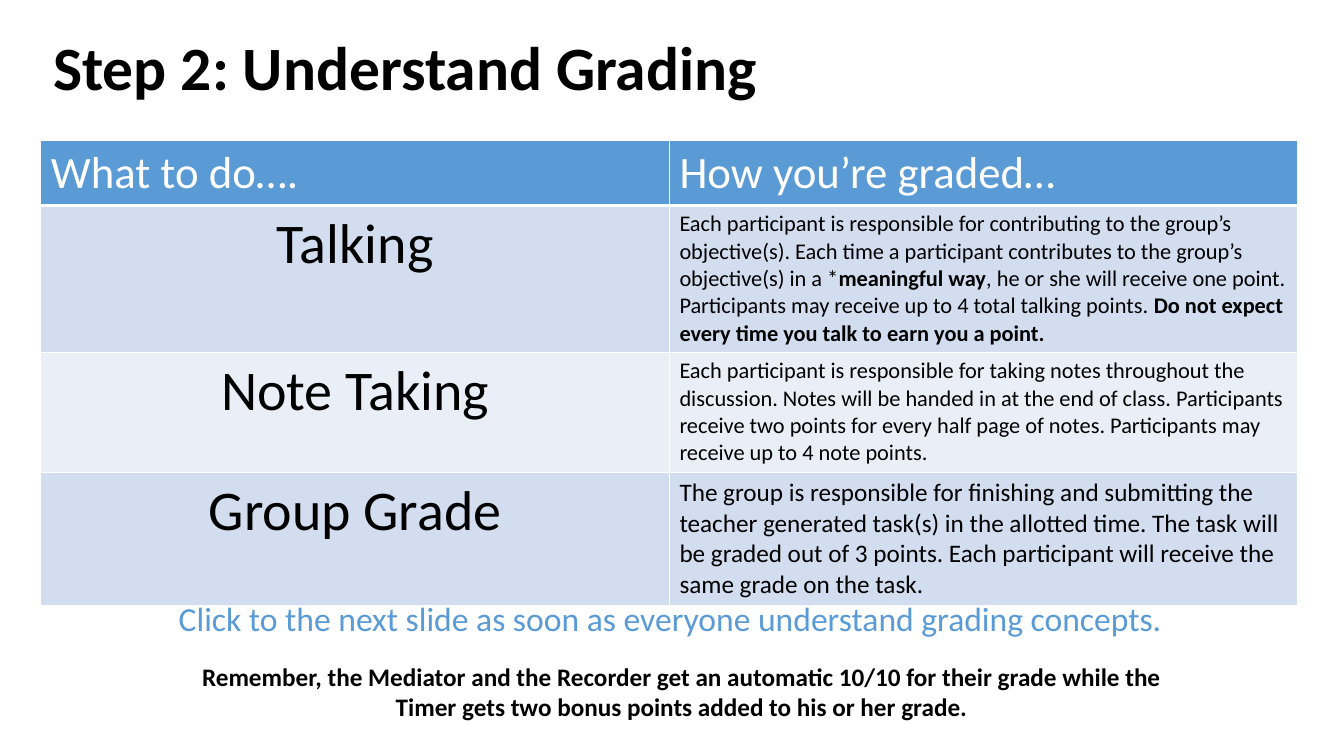
import dataclasses

import pptx
import pptx.dml.color
import pptx.enum.text
import pptx.util
from lxml import etree
from pptx.oxml.ns import qn

Cm, Pt = pptx.util.Cm, pptx.util.Pt
RGB = pptx.dml.color.RGBColor.from_string
Align = pptx.enum.text.PP_ALIGN
Anchor = pptx.enum.text.MSO_ANCHOR


@dataclasses.dataclass
class Theme:
    font: str = "Calibri"
    black: str = "000000"
    white: str = "FFFFFF"
    blue: str = "5B9BD5"
    dark: str = "D2DEEF"
    light: str = "EAEFF7"
    title: int = 44
    task: int = 40
    head: int = 32
    hint: int = 24
    note: int = 18
    rule: int = 16


theme = Theme()


def write(frame, parts, size, color, align=Align.LEFT):
    """Fill a text frame with one paragraph of (text, bold) parts."""
    frame.word_wrap = True
    para = frame.paragraphs[0]
    para.alignment = align
    for text, bold in parts:
        run = para.add_run()
        run.text = text
        run.font.name = theme.font
        run.font.size = Pt(size)
        run.font.bold = bold
        run.font.color.rgb = RGB(color)


def border(cell, base):
    """Draw white cell borders, with the given bottom width in points."""
    props = cell._tc.get_or_add_tcPr()
    for side, width in (("L", 1), ("R", 1), ("T", 1), ("B", base)):
        line = etree.SubElement(props, qn(f"a:ln{side}"), w=str(Pt(width)))
        fill = etree.SubElement(line, qn("a:solidFill"))
        etree.SubElement(fill, qn("a:srgbClr"), val=theme.white)


deck = pptx.Presentation()
deck.slide_width, deck.slide_height = Cm(33.87), Cm(19.05)
slide = deck.slides.add_slide(deck.slide_layouts[5])

# Title
title = slide.shapes.title
title.left, title.top, title.width, title.height = Cm(1.09), Cm(0), Cm(31.67), Cm(3.53)
title.text_frame.vertical_anchor = Anchor.MIDDLE
write(title.text_frame, [("Step 2: Understand Grading", True)], theme.title, theme.black)
title.text_frame.paragraphs[0].line_spacing = 0.9

# Grading table: height, fill, task, task size, grading parts, grading size
rows = [
    (1.63, theme.blue, "What to do….", theme.head,
     [("How you’re graded…", False)], theme.head),
    (3.7, theme.dark, "Talking", theme.task,
     [("Each participant is responsible for contributing to the group’s objective(s). "
       "Each time a participant contributes to the group’s objective(s) in a *", False),
      ("meaningful way", True),
      (", he or she will receive one point. Participants may receive up to 4 total "
       "talking points. ", False),
      ("Do not expect every time you talk to earn you a point.", True)], theme.rule),
    (3.02, theme.light, "Note Taking", theme.task,
     [("Each participant is responsible for taking notes throughout the discussion. "
       "Notes will be handed in at the end of class. Participants receive two points "
       "for every half page of notes. Participants may receive up to 4 note points.",
       False)], theme.rule),
    (3.35, theme.dark, "Group Grade", theme.task,
     [("The group is responsible for finishing and submitting the teacher generated "
       "task(s) in the allotted time. The task will be graded out of 3 points. Each "
       "participant will receive the same grade on the task.", False)], theme.note),
]
high = Cm(sum(row[0] for row in rows))
table = slide.shapes.add_table(len(rows), 2, Cm(1.03), Cm(3.54), Cm(31.68), high).table

for r, (tall, fill, task, big, parts, small) in enumerate(rows):
    table.rows[r].height = Cm(tall)
    head = r == 0
    color = theme.white if head else theme.black
    align = Align.LEFT if head else Align.CENTER
    write(table.cell(r, 0).text_frame, [(task, False)], big, color, align)
    write(table.cell(r, 1).text_frame, parts, small, color)
    for c in range(2):
        cell = table.cell(r, c)
        border(cell, 3 if head else 1)
        cell.fill.solid()
        cell.fill.fore_color.rgb = RGB(fill)

# Closing lines
lines = [
    (4.11, 16.54, 26.14, 1.8, theme.note, theme.black, True,
     "Remember, the Mediator and the Recorder get an automatic 10/10 for their grade "
     "while the Timer gets two bonus points added to his or her grade."),
    (1.09, 14.94, 31.6, 2.06, theme.hint, theme.blue, False,
     "Click to the next slide as soon as everyone understand grading concepts."),
]
for left, top, wide, tall, size, color, bold, text in lines:
    box = slide.shapes.add_textbox(Cm(left), Cm(top), Cm(wide), Cm(tall))
    write(box.text_frame, [(text, bold)], size, color, Align.CENTER)

deck.save("out.pptx")
